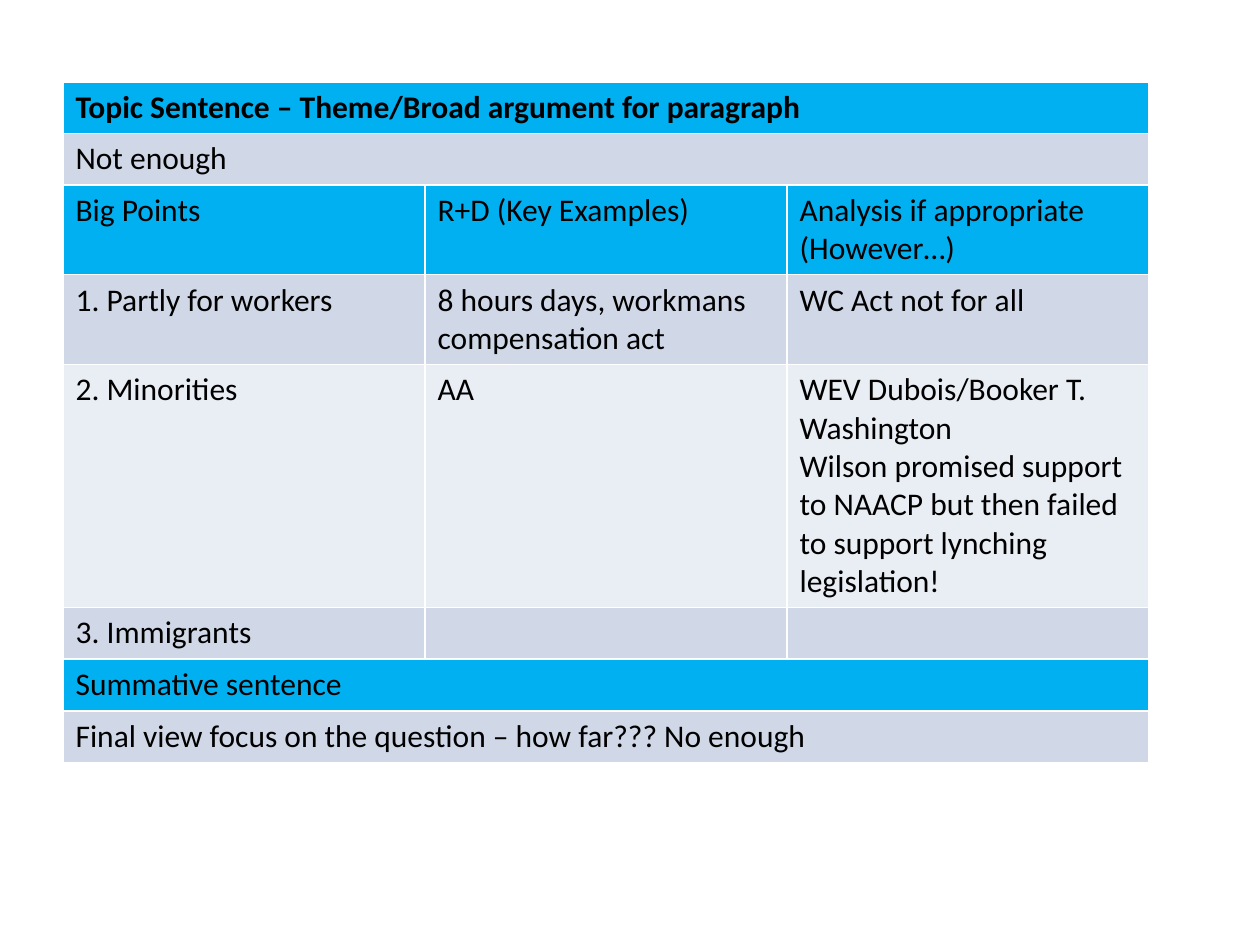
import pptx
import pptx.util
import pptx.dml.color

COLOURS = {"heading": "00B0F0", "band": "D0D8E8", "light": "E9EDF4", "text": "000000"}
FONT, FONT_SIZE = "Calibri", 18

# Paragraph plan: (fill, texts); a single text spans the whole row
COLUMNS = 3
PLAN = [
    ("heading", ["Topic Sentence – Theme/Broad argument for paragraph"]),
    ("band", ["Not enough"]),
    ("heading", ["Big Points", "R+D (Key Examples)", "Analysis if appropriate (However…)"]),
    ("band", ["1. Partly for workers", "8 hours days, workmans compensation act",
              "WC Act not for all"]),
    ("light", ["2. Minorities", "AA",
               "WEV Dubois/Booker T. Washington\n"
               "Wilson promised support to NAACP but then failed to support lynching legislation!"]),
    ("band", ["3. Immigrants", "", ""]),
    ("heading", ["Summative sentence"]),
    ("band", ["Final view focus on the question – how far??? No enough"]),
]


def colour(name):
    return pptx.dml.color.RGBColor.from_string(COLOURS[name])


def main():
    deck = pptx.Presentation()
    inches = pptx.util.Inches
    deck.slide_width, deck.slide_height = inches(10), inches(7.5)
    slide = deck.slides.add_slide(deck.slide_layouts[6])

    # Rows start at one line of text and grow with their wording
    plan_table = slide.shapes.add_table(
        len(PLAN), COLUMNS, inches(0.5), inches(0.65),
        inches(8.62), inches(0.41 * len(PLAN))).table

    for row, (fill, texts) in enumerate(PLAN):
        if len(texts) == 1:
            plan_table.cell(row, 0).merge(plan_table.cell(row, COLUMNS - 1))
        for column, text in enumerate(texts):
            cell = plan_table.cell(row, column)
            cell.text = text
            cell.fill.solid()
            cell.fill.fore_color.rgb = colour(fill)
            for paragraph in cell.text_frame.paragraphs:
                paragraph.font.name = FONT
                paragraph.font.size = pptx.util.Pt(FONT_SIZE)
                paragraph.font.bold = row == 0
                paragraph.font.color.rgb = colour("text")

    deck.save("out.pptx")


if __name__ == "__main__":
    main()
